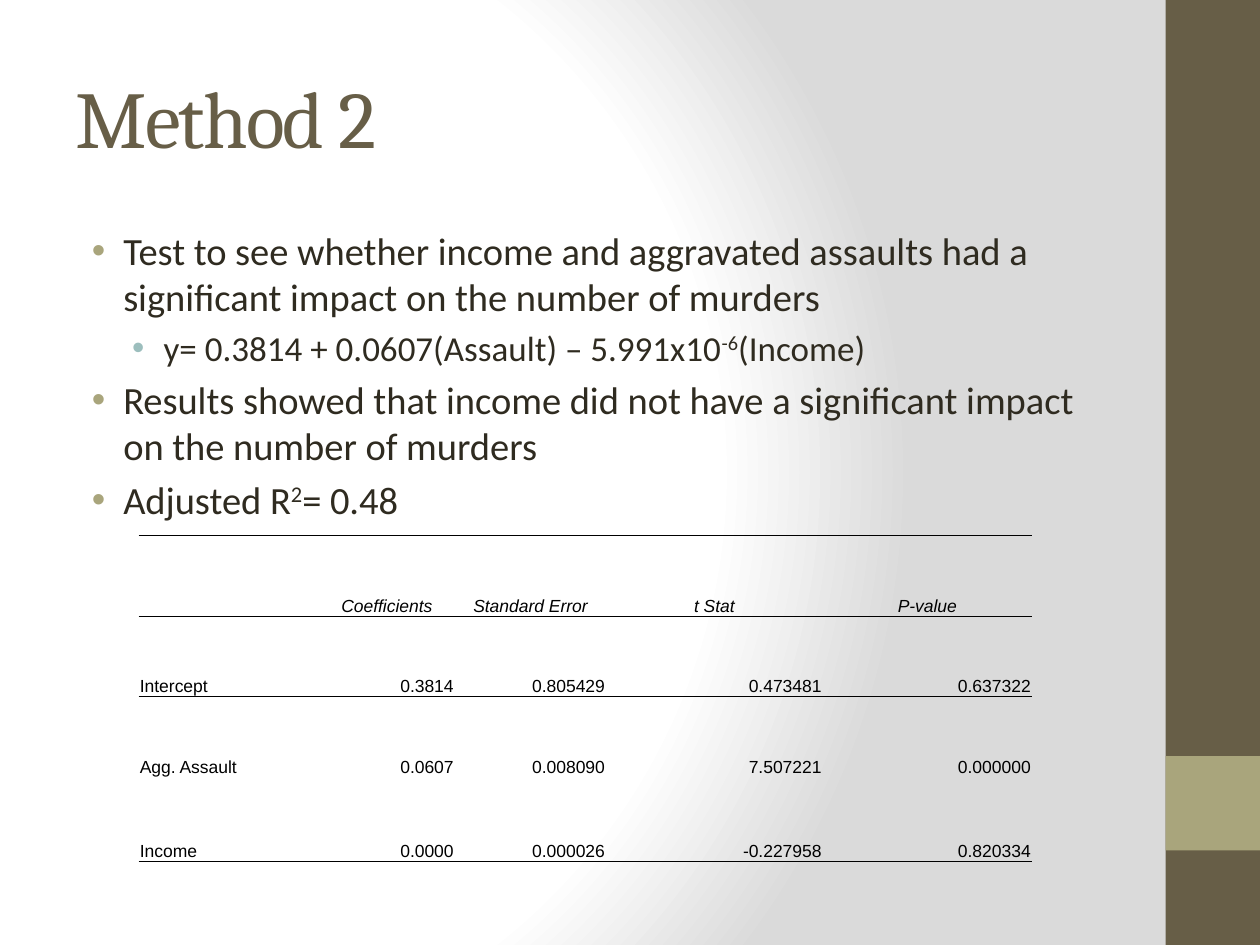
"""Build the regression results slide: title, findings and a coefficient table."""
from dataclasses import dataclass

from lxml import etree
from pptx import Presentation
from pptx import util as u
from pptx.dml import color
from pptx.enum import shapes, text
from pptx.oxml import ns


@dataclass(frozen=True)
class Theme:
    olive: str = "675E47"
    sage: str = "A9A57C"
    aqua: str = "9CBEBD"
    ink: str = "2F2B20"
    black: str = "000000"
    white: str = "FFFFFF"
    grey: str = "DADADA"
    heading: str = "Cambria"
    body: str = "Calibri"
    figures: str = "Arial"
    title_pt: int = 46
    bullet_pts: tuple = (22, 20)
    table_pt: int = 10


@dataclass(frozen=True)
class Box:
    left: float
    top: float
    width: float
    height: float

    def lengths(self) -> tuple:
        return tuple(round(share * side) for share, side in
                     zip((self.left, self.top, self.width, self.height), (WIDTH, HEIGHT) * 2))


@dataclass(frozen=True)
class Bullet:
    level: int
    wording: str
    superscript: str = ""
    ending: str = ""


THEME = Theme()
WIDTH, HEIGHT = u.Inches(10), u.Inches(7.5)
INDENTS = (0.38, 0.7)
HANGING = 0.25
BANDS = (
    (Box(37 / 40, 0, 3 / 40, 1), THEME.olive),
    (Box(37 / 40, 0.8, 3 / 40, 0.1), THEME.sage),
)
TITLE_BOX = Box(0.05, 0.04, 5 / 6, 1 / 6)
BODY_BOX = Box(0.05, 7 / 30, 5 / 6, 0.7)
TABLE_BOX = Box(0.11, 17 / 30, 0.71, 0.34)
FINDINGS = (
    Bullet(0, "Test to see whether income and aggravated assaults had a "
              "significant impact on the number of murders"),
    Bullet(1, "y= 0.3814 + 0.0607(Assault) – 5.991x10", "-6", "(Income)"),
    Bullet(0, "Results showed that income did not have a significant impact "
              "on the number of murders"),
    Bullet(0, "Adjusted R", "2", "= 0.48"),
)
COLUMNS = (1.43, 1.08, 1.2, 1.72, 1.66)
ROWS = (0.64, 0.64, 0.64, 0.67)
REGRESSION = (
    ("", "Coefficients", "Standard Error", "t Stat", "P-value"),
    ("Intercept", "0.3814", "0.805429", "0.473481", "0.637322"),
    ("Agg. Assault", "0.0607", "0.008090", "7.507221", "0.000000"),
    ("Income", "0.0000", "0.000026", "-0.227958", "0.820334"),
)
RULES = {0: (("lnT", 1), ("lnB", 0.5)), 1: (("lnT", 0.5),), 3: (("lnB", 1),)}
NO_STYLE = "{2D5ABB26-0587-4C30-8999-92F81FD0307C}"


def drawing(tag: str, inner: str = "", attributes: str = ""):
    return etree.fromstring(f'<a:{tag} {ns.nsdecls("a")} {attributes}>{inner}</a:{tag}>')


def colour_xml(rgb: str) -> str:
    return f'<a:srgbClr val="{rgb}"/>'


def paint_background(slide) -> None:
    slide.background.fill.gradient()
    gradient = slide.element.find(".//" + ns.qn("a:gradFill"))
    for child in list(gradient):
        gradient.remove(child)
    stops = ((0, THEME.white), (75, THEME.white), (100, THEME.grey))
    gradient.append(drawing("gsLst", "".join(
        f'<a:gs pos="{share * 1000}">{colour_xml(rgb)}</a:gs>' for share, rgb in stops)))
    gradient.append(drawing(
        "path", '<a:fillToRect l="20000" t="50000" r="100000" b="50000"/>', 'path="circle"'))


def add_band(slide, box: Box, rgb: str) -> None:
    band = slide.shapes.add_shape(shapes.MSO_SHAPE.RECTANGLE, *box.lengths())
    band.shadow.inherit = False
    band.fill.solid()
    band.fill.fore_color.rgb = color.RGBColor.from_string(rgb)
    band.line.fill.background()


def style(run, font: str, size: float, rgb: str, italic: bool = False) -> None:
    run.font.name, run.font.size, run.font.italic = font, u.Pt(size), italic
    run.font.color.rgb = color.RGBColor.from_string(rgb)


def add_frame(slide, box: Box):
    frame = slide.shapes.add_textbox(*box.lengths()).text_frame
    frame.word_wrap = True
    return frame


def add_title(slide, wording: str) -> None:
    frame = add_frame(slide, TITLE_BOX)
    frame.vertical_anchor = text.MSO_ANCHOR.MIDDLE
    frame.text = wording
    heading = frame.paragraphs[0].runs[0]
    style(heading, THEME.heading, THEME.title_pt, THEME.olive)
    heading.font._element.set("spc", "-100")


def write_bullet(paragraph, bullet: Bullet) -> None:
    paragraph.level = bullet.level
    properties = paragraph._p.get_or_add_pPr()
    properties.set("marL", str(u.Inches(INDENTS[bullet.level])))
    properties.set("indent", str(-u.Inches(HANGING)))
    properties.append(drawing("spcBef", '<a:spcPct val="20000"/>'))
    properties.append(drawing("buClr", colour_xml((THEME.sage, THEME.aqua)[bullet.level])))
    properties.append(drawing("buFont", attributes='typeface="Arial"'))
    properties.append(drawing("buChar", attributes='char="•"'))
    for wording in filter(None, (bullet.wording, bullet.superscript, bullet.ending)):
        run = paragraph.add_run()
        run.text = wording
        style(run, THEME.body, THEME.bullet_pts[bullet.level], THEME.ink)
        if wording == bullet.superscript:
            run.font._element.set("baseline", "30000")


def add_findings(slide) -> None:
    frame = add_frame(slide, BODY_BOX)
    for place, bullet in enumerate(FINDINGS):
        write_bullet(frame.add_paragraph() if place else frame.paragraphs[0], bullet)


def fill_cell(cell, wording: str, row: int, column: int) -> None:
    cell.margin_left = cell.margin_right = cell.margin_top = u.Inches(0.01)
    cell.margin_bottom = 0
    cell.vertical_anchor = text.MSO_ANCHOR.BOTTOM
    cell.fill.background()
    cell.text_frame.text = wording
    paragraph = cell.text_frame.paragraphs[0]
    if row == 0:
        paragraph.alignment = text.PP_ALIGN.CENTER
    elif column:
        paragraph.alignment = text.PP_ALIGN.RIGHT
    for run in paragraph.runs:
        style(run, THEME.figures, THEME.table_pt, THEME.black, italic=row == 0)
    for place, (edge, weight) in enumerate(RULES.get(row, ())):
        cell._tc.get_or_add_tcPr().insert(place, drawing(
            edge, f"<a:solidFill>{colour_xml(THEME.black)}</a:solidFill>",
            f'w="{u.Pt(weight)}"'))


def add_regression(slide) -> None:
    table = slide.shapes.add_table(len(ROWS), len(COLUMNS), *TABLE_BOX.lengths()).table
    table.first_row = table.horz_banding = False
    table._tbl.tblPr.find(ns.qn("a:tableStyleId")).text = NO_STYLE
    for column, width in zip(table.columns, COLUMNS):
        column.width = u.Inches(width)
    for row, (height, entries) in enumerate(zip(ROWS, REGRESSION)):
        table.rows[row].height = u.Inches(height)
        for column, wording in enumerate(entries):
            fill_cell(table.cell(row, column), wording, row, column)


def main() -> None:
    deck = Presentation()
    deck.slide_width, deck.slide_height = WIDTH, HEIGHT
    slide = deck.slides.add_slide(deck.slide_layouts[6])
    paint_background(slide)
    for box, rgb in BANDS:
        add_band(slide, box, rgb)
    add_title(slide, "Method 2")
    add_findings(slide)
    add_regression(slide)
    deck.save("out.pptx")


if __name__ == "__main__":
    main()
